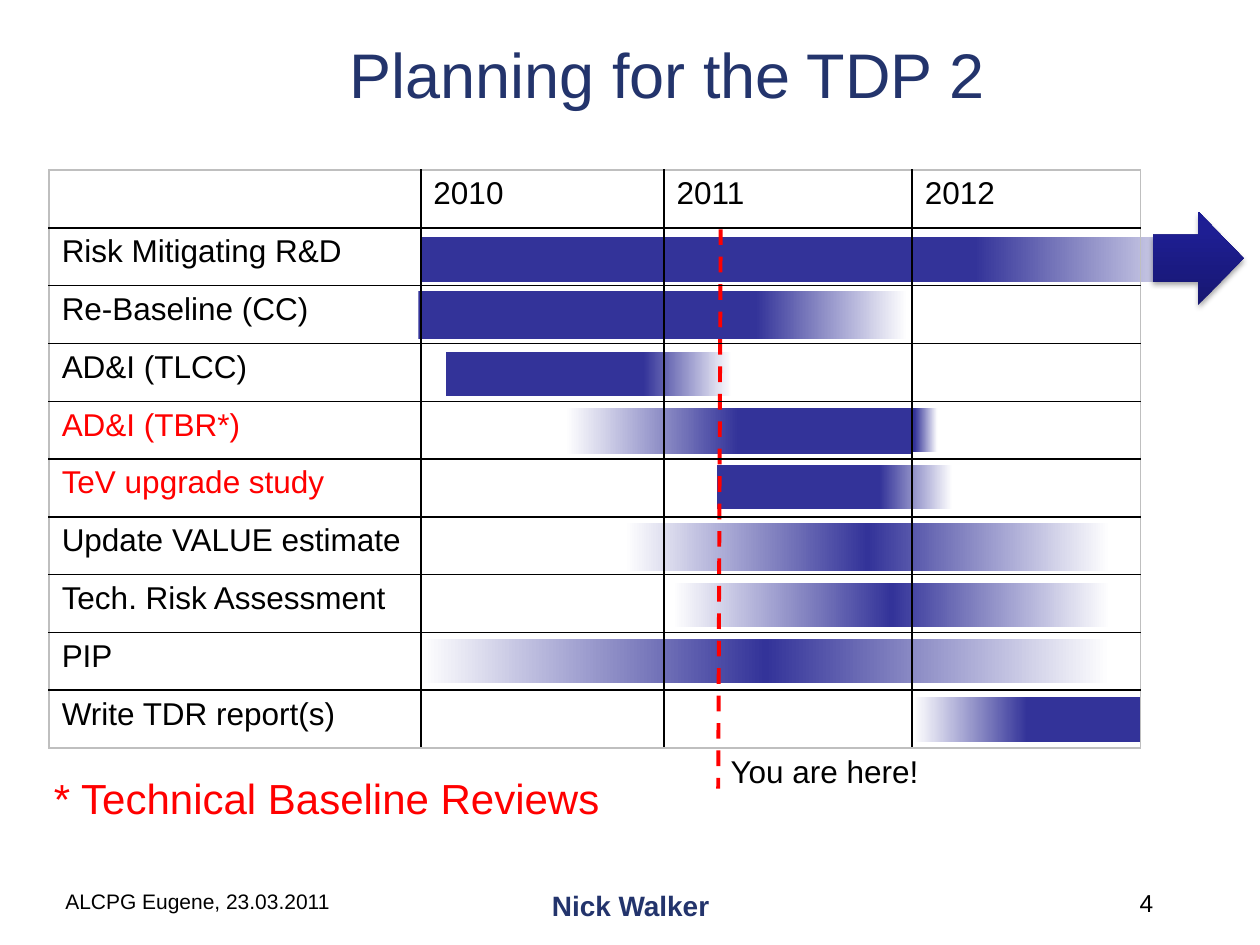
import pptx
import pptx.dml.color
import pptx.enum.dml
import pptx.enum.shapes
import pptx.enum.text
import pptx.oxml
import pptx.oxml.ns
import pptx.util

Inches = pptx.util.Inches
Align = pptx.enum.text.PP_ALIGN
Preset = pptx.enum.shapes.MSO_SHAPE
NAVY, BLACK, RED, GREY = "23346C", "000000", "FF0000", "BFBFBF"

FADE_IN = [(0, "FFFFFF"), (50, "333399")]
FADE_OUT = [(69, "333399"), (100, "FFFFFF")]
FADE_BOTH = FADE_IN + [(100, "FFFFFF")]

YEARS = ["2010", "2011", "2012"]
TASKS = [
    ("Risk Mitigating R&D", BLACK),
    ("Re-Baseline (CC)", BLACK),
    ("AD&I (TLCC)", BLACK),
    ("AD&I (TBR*)", RED),
    ("TeV upgrade study", RED),
    ("Update VALUE estimate", BLACK),
    ("Tech. Risk Assessment", BLACK),
    ("PIP", BLACK),
    ("Write TDR report(s)", BLACK),
]
COLUMN_WIDTHS = [2.95, 1.93, 1.97, 1.81]
BARS = [
    ((7.25, 5.53, 1.81, 0.36), FADE_IN),
    ((5.34, 4.63, 3.47, 0.35), FADE_BOTH),
    ((3.33, 1.88, 6.38, 0.36), FADE_OUT),
    ((4.96, 4.15, 3.85, 0.38), FADE_BOTH),
    ((3.32, 2.31, 3.88, 0.38), FADE_OUT),
    ((3.54, 2.79, 2.27, 0.35), FADE_OUT),
    ((4.49, 3.24, 2.74, 0.36), FADE_IN),
    ((6.86, 3.24, 0.58, 0.35), FADE_OUT),
    ((3.34, 5.07, 5.47, 0.35), FADE_BOTH),
    ((5.69, 3.69, 1.87, 0.35), FADE_OUT),
]


def rgb(color):
    """Turn a hex string into a colour."""
    return pptx.dml.color.RGBColor.from_string(color)


def xml(text):
    """Parse a drawing element given without its namespace declaration."""
    namespace = pptx.oxml.ns.nsdecls("a")
    tag_end = min(i for i in (text.find(c) for c in " />") if i > 0)
    return pptx.oxml.parse_xml(f"{text[:tag_end]} {namespace}{text[tag_end:]}")


def set_text(frame, text, size, color, align=Align.LEFT, bold=False):
    """Write one styled paragraph into a text frame."""
    paragraph = frame.paragraphs[0]
    paragraph.text = text
    paragraph.alignment = align
    font = paragraph.font
    font.name, font.size, font.bold = "Arial", pptx.util.Pt(size), bold
    font.color.rgb = rgb(color)


def add_text(slide, box, text, size, color, align=Align.LEFT, bold=False, wrap=True):
    """Add a text box and return its frame."""
    frame = slide.shapes.add_textbox(*map(Inches, box)).text_frame
    frame.word_wrap = wrap
    set_text(frame, text, size, color, align, bold)
    return frame


def add_gradient_shape(slide, preset, box, stops, angle=0):
    """Add a borderless preset shape filled with a linear gradient."""
    shape = slide.shapes.add_shape(preset, *map(Inches, box))
    shape.shadow.inherit = False
    shape.line.fill.background()
    shape.fill.gradient()
    shape.fill.gradient_angle = angle
    stop_list = shape._element.spPr.find(".//" + pptx.oxml.ns.qn("a:gsLst"))
    stop_list[:] = [
        xml(f'<a:gs pos="{position * 1000}"><a:srgbClr val="{color}"/></a:gs>')
        for position, color in stops
    ]
    return shape


def add_continuation_arrow(slide):
    """Add the shadowed arrow showing that R&D goes on."""
    stops = [(0, "171771"), (80, "1E1E93"), (100, "1C1C96")]
    arrow = add_gradient_shape(
        slide, Preset.RIGHT_ARROW, (9.15, 1.68, 0.72, 0.74), stops, angle=90)
    effects = arrow._element.spPr.find(pptx.oxml.ns.qn("a:effectLst"))
    effects.append(xml(
        '<a:outerShdw blurRad="40000" dist="23000" dir="5400000" rotWithShape="0">'
        '<a:srgbClr val="000000"><a:alpha val="35000"/></a:srgbClr></a:outerShdw>'))


def add_today_line(slide):
    """Add the dashed line marking the current date."""
    today = slide.shapes.add_connector(
        pptx.enum.shapes.MSO_CONNECTOR.STRAIGHT,
        *map(Inches, (5.72, 1.82, 5.7, 6.26)))
    today.line.color.rgb = rgb(RED)
    today.line.width = pptx.util.Pt(2.25)
    today.line.dash_style = pptx.enum.dml.MSO_LINE.DASH
    today._element.spPr.append(xml("<a:effectLst/>"))


def set_borders(cell, outer_sides):
    """Draw grey lines on the outer sides of a cell and black ones elsewhere."""
    properties = cell._tc.get_or_add_tcPr()
    for side in "LRTB":
        color = GREY if side in outer_sides else BLACK
        properties.append(xml(
            f'<a:ln{side} w="12700"><a:solidFill><a:srgbClr val="{color}"/>'
            f'</a:solidFill></a:ln{side}>'))


def add_schedule(slide):
    """Add the transparent table of tasks by year."""
    rows, columns = len(TASKS) + 1, len(COLUMN_WIDTHS)
    table = slide.shapes.add_table(
        rows, columns, *map(Inches, (0.39, 1.35, 8.66, 4.59))).table
    table.first_row = table.horz_banding = False
    for column, width in zip(table.columns, COLUMN_WIDTHS):
        column.width = Inches(width)
    for r in range(rows):
        for c in range(columns):
            edges = {"L": c == 0, "R": c == columns - 1, "T": r == 0, "B": r == rows - 1}
            cell = table.cell(r, c)
            set_borders(cell, [side for side, outer in edges.items() if outer])
            cell.fill.background()
    for c, year in enumerate(YEARS, 1):
        set_text(table.cell(0, c).text_frame, year, 18, BLACK)
    for r, (task, color) in enumerate(TASKS, 1):
        set_text(table.cell(r, 0).text_frame, task, 18, color)


def main():
    """Build the planning slide."""
    deck = pptx.Presentation()
    deck.slide_width, deck.slide_height = Inches(10), Inches(7.5)
    slide = deck.slides.add_slide(deck.slide_layouts[6])

    title = add_text(slide, (1.42, 0.08, 7.75, 1), "Planning for the TDP 2", 36, NAVY, Align.CENTER)
    title.vertical_anchor = pptx.enum.text.MSO_ANCHOR.MIDDLE
    for box, stops in BARS:
        add_gradient_shape(slide, Preset.RECTANGLE, box, stops)
    add_continuation_arrow(slide)
    add_text(slide, (0.33, 6.08, 6.84, 0.5), "* Technical Baseline Reviews", 24, RED)
    add_text(slide, (5.7, 5.92, 1.71, 0.4), "You are here!", 18, BLACK, wrap=False)
    add_today_line(slide)
    add_schedule(slide)
    add_text(slide, (0.42, 7, 2.67, 0.5), "ALCPG Eugene, 23.03.2011", 12, BLACK)
    add_text(slide, (3.42, 7, 3.17, 0.5), "Nick Walker", 16, NAVY, Align.CENTER, bold=True)
    add_text(slide, (7.17, 7, 2.08, 0.5), "4", 14, BLACK, Align.RIGHT)
    deck.save("out.pptx")


if __name__ == "__main__":
    main()
